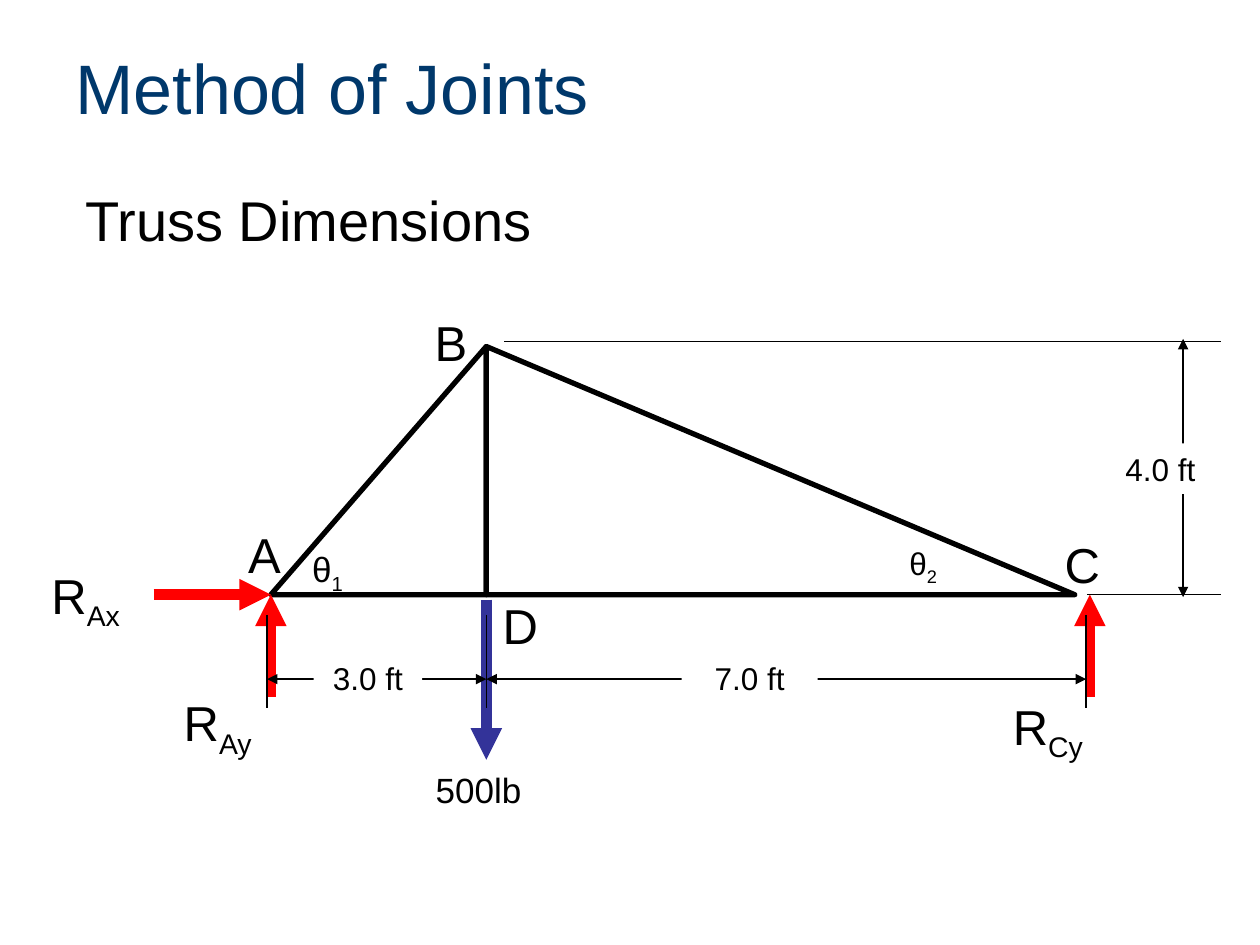
from typing import NamedTuple

from lxml.etree import SubElement
from pptx import Presentation
from pptx.dml.color import RGBColor
from pptx.enum.shapes import MSO_CONNECTOR as Connector, MSO_SHAPE as Preset
from pptx.enum.text import MSO_ANCHOR as Anchor, PP_ALIGN as Align
from pptx.oxml.ns import qn
from pptx.util import Emu, Inches, Pt

COLUMNS, ROWS = 100, 75
BLACK, WHITE, RED, BLUE, NAVY = "000000", "FFFFFF", "FF0000", "333399", "00386B"


class Point(NamedTuple):
    column: float
    row: float


class Box(NamedTuple):
    column: float
    row: float
    columns: float
    rows: float


class Label(NamedTuple):
    text: str
    box: Box
    size: float = 28
    subscript: str = ""


class Line(NamedTuple):
    start: Point
    end: Point
    width: float = 0.75
    color: str = BLACK
    head: bool = False
    tail: bool = False


JOINT_A, JOINT_B = Point(21.5, 47.2), Point(38.6, 27.5)
JOINT_C, JOINT_D = Point(85.3, 47.2), Point(38.6, 47.2)
SUPPORT_C = 86.5
SPAN_MARKS = (21.2, 38.6, 86.2)
SPAN_ROW, HEIGHT_COLUMN = 53.9, 93.9

FORCES = [
    Line(Point(38.6, 47.6), Point(38.6, 60.3), 6, BLUE, tail=True),
    Line(Point(JOINT_A.column, 55.3), JOINT_A, 6, RED, tail=True),
    Line(Point(SUPPORT_C, 55.3), Point(SUPPORT_C, 47.2), 6, RED, tail=True),
    Line(Point(12.2, 47.2), JOINT_A, 6, RED, tail=True),
]
EXTENSIONS = [Line(Point(mark, 48.8), Point(mark, 56.2)) for mark in SPAN_MARKS] + [
    Line(Point(96.9, 27.1), Point(40, 27.1)),
    Line(Point(86.3, 47.2), Point(96.9, 47.2)),
]
DIMENSIONS = [
    Line(Point(left, SPAN_ROW), Point(right, SPAN_ROW), 1, head=True, tail=True)
    for left, right in zip(SPAN_MARKS, SPAN_MARKS[1:])
] + [Line(Point(HEIGHT_COLUMN, 26.9), Point(HEIGHT_COLUMN, 47.4), 1, head=True, tail=True)]

MEASURES = [
    Label("3.0 ft", Box(24.9, 51.8, 8.6, 4), 18),
    Label("7.0 ft", Box(54.1, 51.8, 10.8, 4), 18),
    Label("4.0 ft", Box(87.5, 35.2, 9.2, 4), 18),
]
LABELS = [
    Label("Truss Dimensions", Box(5.8, 14.2, 38.9, 6.3), 32),
    Label("C", Box(83.5, 41.9, 4.2, 5.7)),
    Label("A", Box(18.7, 41.1, 4.2, 5.7)),
    Label("D", Box(38.9, 46.8, 4.2, 5.7)),
    Label("B", Box(33.5, 24.3, 4.2, 5.7)),
    Label("R", Box(3.1, 44.4, 12.2, 5.7), subscript="Ax"),
    Label("R", Box(13.6, 54.5, 12.6, 5.7), subscript="Ay"),
    Label("R", Box(79.4, 54.8, 12, 5.7), subscript="Cy"),
    Label("θ", Box(23.8, 43, 12.6, 4.3), 20, "1"),
    Label("θ", Box(71.2, 42.7, 13.4, 4), 18, "2"),
    Label("500lb", Box(33.6, 60.5, 10.5, 4.3), 20),
]

presentation = Presentation()
presentation.slide_width, presentation.slide_height = Inches(10), Inches(7.5)
slide = presentation.slides.add_slide(presentation.slide_layouts[5])


def across(columns: float) -> Emu:
    return Emu(round(presentation.slide_width * columns / COLUMNS))


def down(rows: float) -> Emu:
    return Emu(round(presentation.slide_height * rows / ROWS))


def place(box: Box) -> tuple:
    return across(box.column), down(box.row), across(box.columns), down(box.rows)


def rgb(color: str) -> RGBColor:
    return RGBColor.from_string(color)


def write(shape, text: str, *, size: float, color: str = BLACK, subscript: str = "",
          align=Align.LEFT, anchor=Anchor.TOP, wrap: bool = True) -> None:
    frame = shape.text_frame
    frame.word_wrap = wrap
    frame.vertical_anchor = anchor
    paragraph = frame.paragraphs[0]
    paragraph.alignment = align
    for content, baseline in ((text, "0"), (subscript, "-25000")):
        if content:
            run = paragraph.add_run()
            run.text = content
            run.font.name, run.font.size = "Arial", Pt(size)
            run.font.color.rgb = rgb(color)
            run.font._element.set("baseline", baseline)


def draw_triangle(box: Box, flipped: bool = False) -> None:
    triangle = slide.shapes.add_shape(Preset.RIGHT_TRIANGLE, *place(box))
    triangle.shadow.inherit = False
    triangle.fill.background()
    triangle.line.color.rgb = rgb(BLACK)
    triangle.line.width = Pt(3)
    if flipped:
        triangle._element.spPr.xfrm.set("flipH", "1")


def draw_line(line: Line) -> None:
    connector = slide.shapes.add_connector(
        Connector.STRAIGHT, across(line.start.column), down(line.start.row),
        across(line.end.column), down(line.end.row))
    connector.line.color.rgb = rgb(line.color)
    connector.line.width = Pt(line.width)
    for shown, tag in ((line.head, "a:headEnd"), (line.tail, "a:tailEnd")):
        if shown:
            SubElement(connector.line._get_or_add_ln(), qn(tag), type="triangle")
    SubElement(connector._element.spPr, qn("a:effectLst"))


def draw_measure(label: Label) -> None:
    plate = slide.shapes.add_shape(Preset.RECTANGLE, *place(label.box))
    plate.shadow.inherit = False
    plate.fill.solid()
    plate.fill.fore_color.rgb = rgb(WHITE)
    plate.line.fill.background()
    write(plate, label.text, size=label.size, align=Align.CENTER)


def draw_label(label: Label) -> None:
    write(slide.shapes.add_textbox(*place(label.box)), label.text,
          size=label.size, subscript=label.subscript, wrap=False)


def main() -> None:
    title = slide.shapes.title
    title.left, title.top, title.width, title.height = place(Box(5, 3, 90, 7.8))
    write(title, "Method of Joints", size=40, color=NAVY, anchor=Anchor.MIDDLE)

    height = JOINT_D.row - JOINT_B.row
    draw_triangle(Box(*JOINT_B, JOINT_C.column - JOINT_D.column, height))
    draw_triangle(Box(JOINT_A.column, JOINT_B.row, JOINT_D.column - JOINT_A.column, height),
                  flipped=True)
    for line in FORCES + EXTENSIONS + DIMENSIONS:
        draw_line(line)
    for measure in MEASURES:
        draw_measure(measure)
    for label in LABELS:
        draw_label(label)
    presentation.save("out.pptx")


if __name__ == "__main__":
    main()
